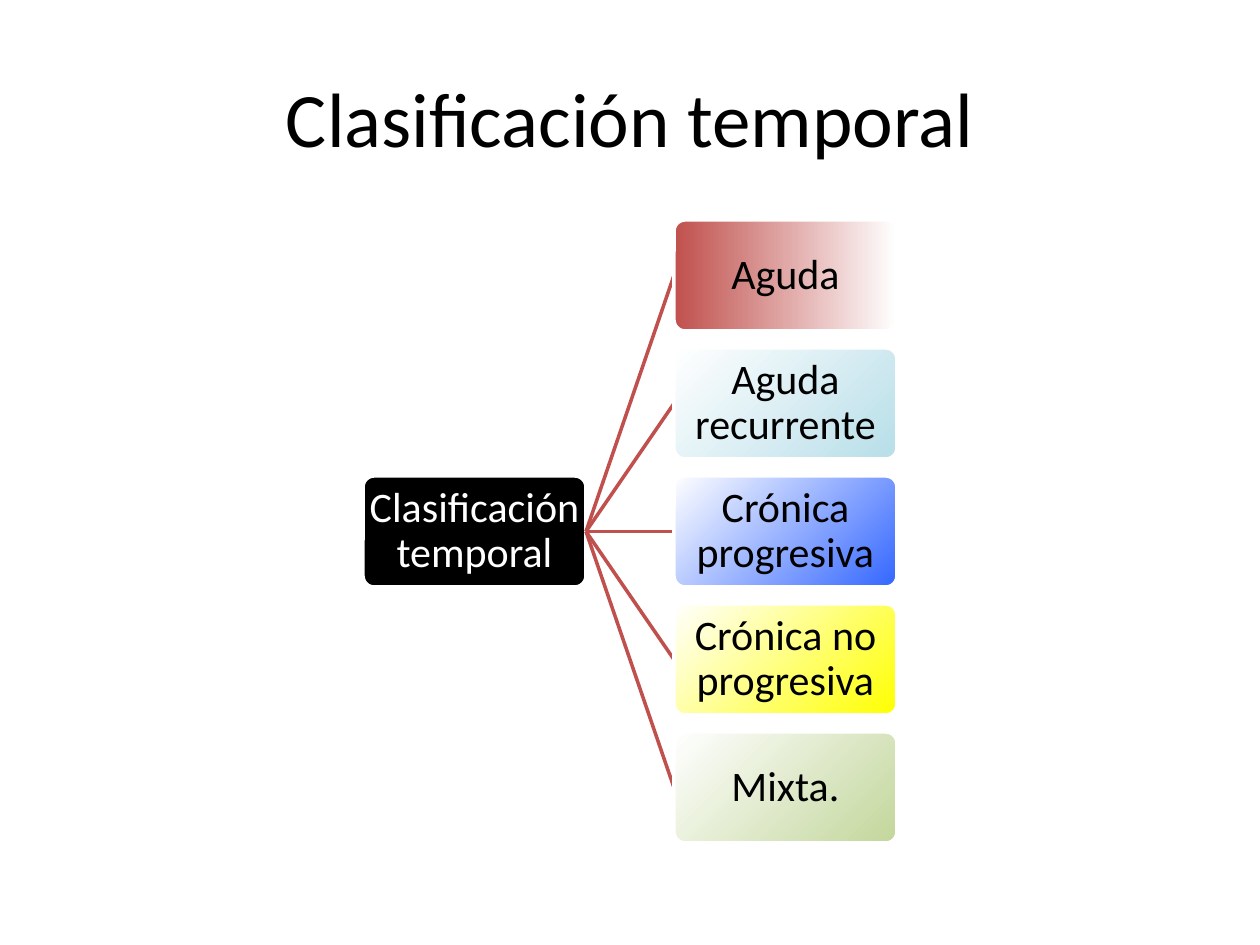
from lxml.etree import SubElement
from pptx import Presentation
from pptx.dml.color import RGBColor
from pptx.enum.shapes import MSO_CONNECTOR as Connector, MSO_SHAPE as Shape
from pptx.enum.text import MSO_ANCHOR as Anchor, PP_ALIGN as Align
from pptx.oxml.ns import qn
from pptx.util import Pt

# Content
TITLE = "Clasificación temporal"
ROOT = "Clasificación temporal"
BRANCHES = [  # text, fill colour, gradient kind
    ("Aguda", "red", "linear"),
    ("Aguda recurrente", "aqua", "corner"),
    ("Crónica progresiva", "blue", "corner"),
    ("Crónica no progresiva", "yellow", "corner"),
    ("Mixta.", "green", "corner"),
]
COLORS = {
    "black": "000000", "white": "FFFFFF", "red": "C0504D", "aqua": "B7DEE8",
    "blue": "3366FF", "yellow": "FFFF00", "green": "C3D69B",
}
FONT = "Calibri"

# Layout in px
PX = 914400 / 126
PAGE_W, PAGE_H = 1260, 945
TITLE_AREA = (63, 38, 1134, 158)
BOX_W, BOX_H = 223, 111
ROOT_X, BRANCH_X = 363, 674
TOP, PITCH = 220, 128
INSET = 3


def emu(px):
    return round(px * PX)


def color(name):
    return RGBColor.from_string(COLORS[name])


def write(box, text, size, ink="black", spacing=None, inset=None):
    frame = box.text_frame
    frame.word_wrap = True
    frame.vertical_anchor = Anchor.MIDDLE
    if inset is not None:
        frame.margin_left = frame.margin_right = emu(inset)
        frame.margin_top = frame.margin_bottom = emu(inset)
    para = frame.paragraphs[0]
    para.alignment = Align.CENTER
    para.line_spacing = spacing
    span = para.add_run()
    span.text = text
    span.font.name, span.font.size = FONT, Pt(size)
    span.font.color.rgb = color(ink)


def paint(box, fill, gradient):
    if gradient is None:
        box.fill.solid()
        box.fill.fore_color.rgb = color(fill)
        return
    box.fill.gradient()
    box.fill.gradient_angle = 0
    for stop, name in zip(box.fill.gradient_stops, (fill, "white")):
        stop.color.rgb = color(name)
    if gradient == "corner":  # radiate from the bottom right corner
        grad = box._element.spPr.find(qn("a:gradFill"))
        grad.remove(grad.find(qn("a:lin")))
        radial = SubElement(grad, qn("a:path"), {"path": "circle"})
        SubElement(radial, qn("a:fillToRect"), {"l": "100000", "t": "100000"})


def add_node(page, text, x, y, fill, gradient=None, ink="black"):
    box = page.shapes.add_shape(
        Shape.ROUNDED_RECTANGLE, emu(x), emu(y), emu(BOX_W), emu(BOX_H))
    box.adjustments[0] = 0.1
    box.shadow.inherit = False
    paint(box, fill, gradient)
    box.line.color.rgb = color("white")
    box.line.width = Pt(2)
    write(box, text, 24, ink=ink, spacing=0.9, inset=INSET)
    return box


def join(page, root, branch):
    line = page.shapes.add_connector(Connector.STRAIGHT, 0, 0, 0, 0)
    line.begin_connect(root, 3)
    line.end_connect(branch, 1)
    line.line.color.rgb = color("red")
    line.line.width = Pt(2)
    SubElement(line._element.spPr, qn("a:effectLst"))
    branch._element.addprevious(line._element)  # keep the line behind its branch


def main():
    deck = Presentation()
    deck.slide_width, deck.slide_height = emu(PAGE_W), emu(PAGE_H)
    page = deck.slides.add_slide(deck.slide_layouts[6])

    # Title
    title = page.shapes.add_textbox(*map(emu, TITLE_AREA))
    write(title, TITLE, 44)

    # Root, level with the middle branch
    root_y = TOP + len(BRANCHES) // 2 * PITCH
    root = add_node(page, ROOT, ROOT_X, root_y, "black", ink="white")

    # Branches
    for row, (text, fill, gradient) in enumerate(BRANCHES):
        branch = add_node(page, text, BRANCH_X, TOP + row * PITCH, fill, gradient)
        join(page, root, branch)

    deck.save("out.pptx")


if __name__ == "__main__":
    main()
